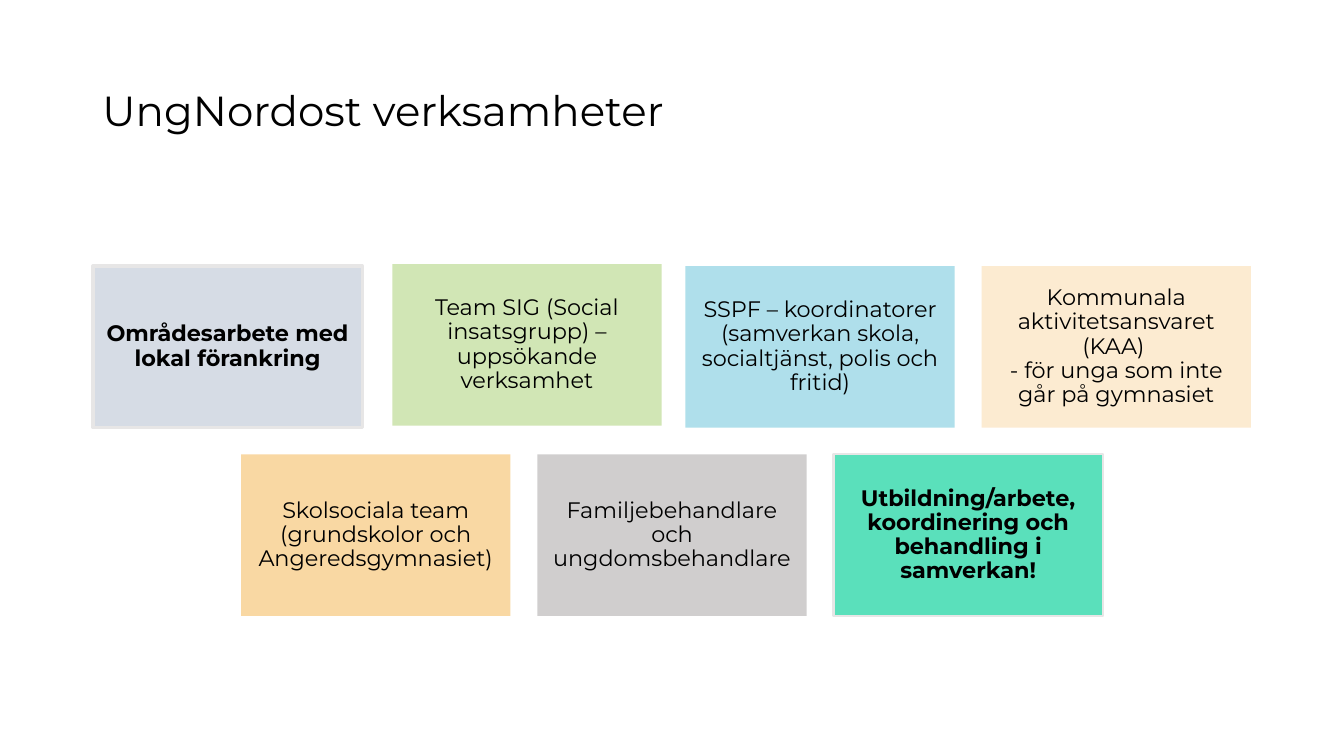
from copy import deepcopy

from pptx import Presentation
from pptx.dml.color import RGBColor
from pptx.enum.shapes import MSO_SHAPE
from pptx.enum.text import MSO_ANCHOR, MSO_AUTO_SIZE, PP_ALIGN
from pptx.oxml.ns import qn
from pptx.util import Pt

COLORS = {
    "text": "000000",
    "border": "E7E6E6",
    "area": "D6DCE5",
    "outreach": "D1E6B5",
    "coordinators": "AFDFEB",
    "activity": "FCEBD1",
    "school": "F9D8A3",
    "family": "D0CECE",
    "cooperation": "5AE0BB",
}
CARD_WIDTH, CARD_HEIGHT = 192.4, 115.4
COLUMN_STEP, ROW_STEP = 211.6, 134.6
ROWS = [
    [
        dict(text="Områdesarbete med lokal förankring", fill="area", border=2.25, bold=True),
        dict(text="Team SIG (Social insatsgrupp) – uppsökande verksamhet",
             fill="outreach", nudge=(2.2, -1.4)),
        dict(text="SSPF – koordinatorer (samverkan skola, socialtjänst, polis och fritid)",
             fill="coordinators"),
        dict(text="Kommunala aktivitetsansvaret (KAA) \n- för unga som inte går på gymnasiet",
             fill="activity"),
    ],
    [
        dict(text="Skolsociala team (grundskolor och Angeredsgymnasiet)", fill="school"),
        dict(text="Familjebehandlare och ungdomsbehandlare", fill="family"),
        dict(text="Utbildning/arbete, koordinering och behandling i samverkan!",
             fill="cooperation", border=1.5, bold=True),
    ],
]


def rgb(name):
    """Return the named colour."""
    return RGBColor.from_string(COLORS[name])


def write_text(frame, text, size=16, bold=False, align=PP_ALIGN.CENTER, inset=None):
    """Write one formatted paragraph, vertically centred in its frame."""
    frame.word_wrap = True
    frame.auto_size = MSO_AUTO_SIZE.NONE
    frame.vertical_anchor = MSO_ANCHOR.MIDDLE
    if inset is not None:
        frame.margin_left = frame.margin_right = Pt(inset)
        frame.margin_top = frame.margin_bottom = Pt(inset)
    paragraph = frame.paragraphs[0]
    paragraph.text = text
    paragraph.alignment = align
    paragraph.line_spacing = 0.9
    for run in paragraph.runs:
        run.font.name = "Montserrat"
        run.font.size = Pt(size)
        run.font.bold = bold
        run.font.color.rgb = rgb("text")
    for line_break in paragraph._p.findall(qn("a:br")):
        line_break.append(deepcopy(paragraph.runs[0]._r.rPr))


def add_heading(slide, left, top, width, height):
    """Place and format the slide title."""
    heading = slide.shapes.title
    heading.left, heading.top = Pt(left), Pt(top)
    heading.width, heading.height = Pt(width), Pt(height)
    write_text(heading.text_frame, "UngNordost verksamheter", size=30, align=PP_ALIGN.LEFT)


def add_card(slide, left, top, text, fill, border=None, bold=False, nudge=(0, 0)):
    """Draw one activity card."""
    card = slide.shapes.add_shape(
        MSO_SHAPE.RECTANGLE, Pt(left + nudge[0]), Pt(top + nudge[1]),
        Pt(CARD_WIDTH), Pt(CARD_HEIGHT))
    card.shadow.inherit = False
    card.fill.solid()
    card.fill.fore_color.rgb = rgb(fill)
    if border:
        card.line.color.rgb = rgb("border")
        card.line.width = Pt(border)
    else:
        card.line.fill.background()
    write_text(card.text_frame, text, bold=bold, inset=5)


def add_activities(slide, left, top, width):
    """Lay out the rows of cards, each centred in the given width."""
    for row_index, row in enumerate(ROWS):
        row_width = (len(row) - 1) * COLUMN_STEP + CARD_WIDTH
        row_left = left + (width - row_width) / 2
        for column, card in enumerate(row):
            add_card(slide, row_left + column * COLUMN_STEP, top + row_index * ROW_STEP, **card)


def main():
    """Build and save the presentation."""
    deck = Presentation()
    deck.slide_width, deck.slide_height = Pt(960), Pt(540)
    slide = deck.slides.add_slide(deck.slide_layouts[5])
    add_heading(slide, 66, 28.8, 828, 104.4)
    add_activities(slide, 66, 190, 828)
    deck.save("out.pptx")


if __name__ == "__main__":
    main()
